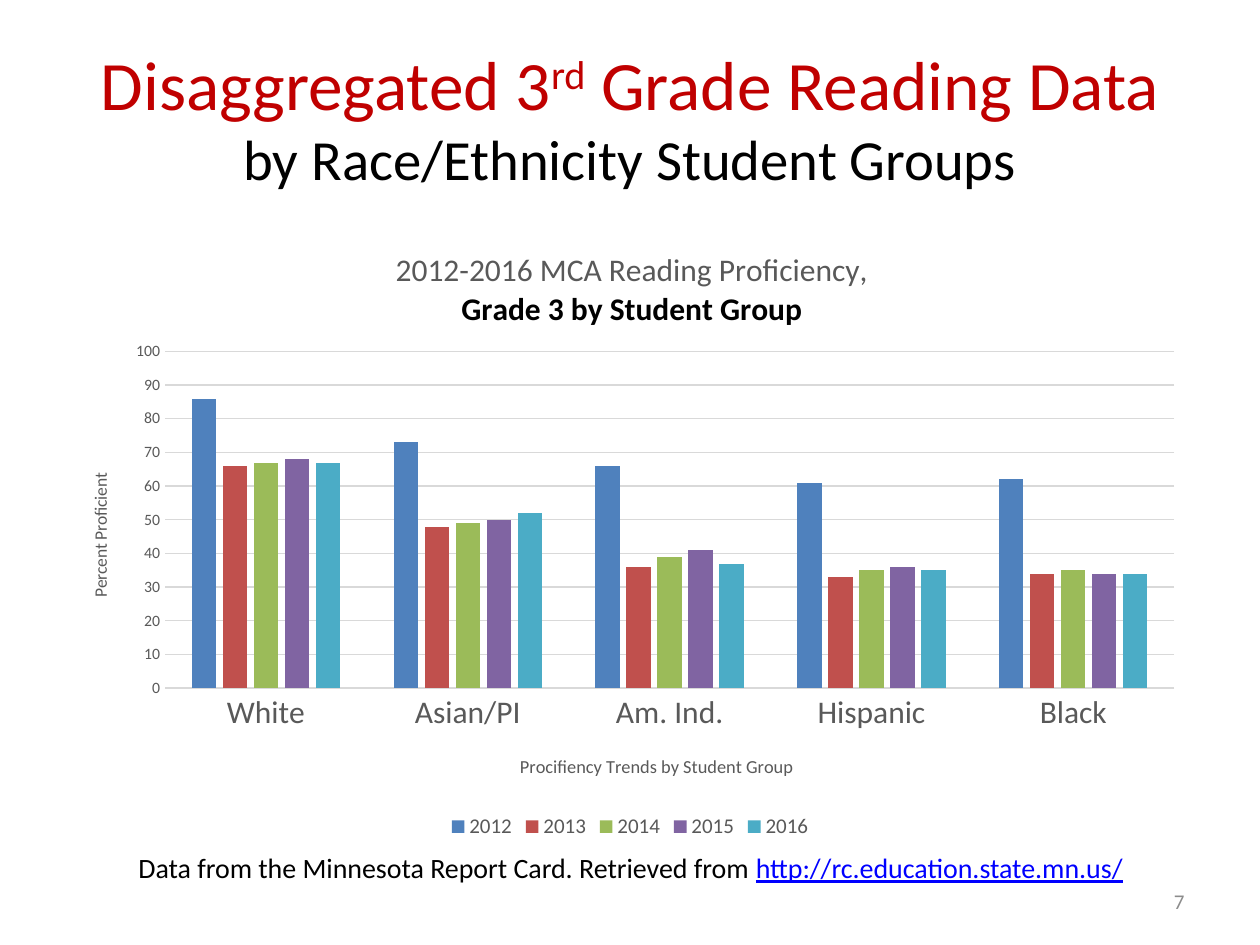
from pptx import Presentation
from pptx.chart.data import CategoryChartData
from pptx.dml.color import RGBColor
from pptx.enum.chart import XL_CHART_TYPE, XL_LEGEND_POSITION, XL_TICK_MARK
from pptx.enum.text import MSO_ANCHOR, PP_ALIGN
from pptx.oxml import parse_xml
from pptx.oxml.ns import nsdecls, qn
from pptx.util import Inches, Pt

FONT = "Calibri"
COLORS = {"title": "C00000", "text": "000000", "link": "0000FF", "number": "8C8C8C",
          "label": "595959", "grid": "D9D9D9"}
GROUPS = ["White", "Asian/PI", "Am. Ind.", "Hispanic", "Black"]
YEARS = {
    "2012": ("4F81BD", [86, 73, 66, 61, 62]),
    "2013": ("C0504D", [66, 48, 36, 33, 34]),
    "2014": ("9BBB59", [67, 49, 39, 35, 35]),
    "2015": ("8064A2", [68, 50, 41, 36, 34]),
    "2016": ("4BACC6", [67, 52, 37, 35, 34]),
}


def set_font(font, size, color, bold=False):
    """Apply the slide typeface with a size, colour and weight."""
    font.name, font.size, font.bold = FONT, Pt(size), bold
    font.color.rgb = RGBColor.from_string(COLORS[color])


def add_text_box(slide, box, anchor=MSO_ANCHOR.TOP, align=PP_ALIGN.LEFT):
    """Add a wrapping text box and return its first paragraph."""
    tf = slide.shapes.add_textbox(*map(Inches, box)).text_frame
    tf.word_wrap = True
    tf.vertical_anchor = anchor
    p = tf.paragraphs[0]
    p.alignment = align
    return p


def add_run(p, text, size, color):
    """Append a styled run to a paragraph."""
    r = p.add_run()
    r.text = text
    set_font(r.font, size, color)
    return r


def add_title(slide, box):
    """Add the two-line heading with its raised ordinal."""
    p = add_text_box(slide, box, MSO_ANCHOR.MIDDLE, PP_ALIGN.CENTER)
    add_run(p, "Disaggregated 3", 39.6, "title")
    ordinal = add_run(p, "rd", 39.6, "title")
    ordinal.font._element.set("baseline", "30000")
    add_run(p, " Grade Reading Data", 39.6, "title")
    p.add_line_break()
    add_run(p, "by Race/Ethnicity Student Groups", 32.4, "text")


def make_layout(x, y, w=None, h=None):
    """Build a manual chart layout from fractions of the chart area."""
    parts = [("xMode", "edge"), ("yMode", "edge"), ("x", x), ("y", y)]
    if w is not None:
        parts = [("layoutTarget", "inner")] + parts + [("w", w), ("h", h)]
    body = "".join(f'<c:{tag} val="{val}"/>' for tag, val in parts)
    return parse_xml(f'<c:layout {nsdecls("c")}><c:manualLayout>{body}</c:manualLayout></c:layout>')


def set_chart_title(title, lines, x, y):
    """Write styled lines into a chart or axis title and place it."""
    tf = title.text_frame
    for i, (text, size, color, bold) in enumerate(lines):
        p = tf.paragraphs[0] if i == 0 else tf.add_paragraph()
        p.text = text
        set_font(p.font, size, color, bold)
    for layout in title.element.findall(qn("c:layout")):
        title.element.remove(layout)
    title.element.find(qn("c:tx")).addnext(make_layout(x, y))


def style_axes(chart):
    """Format both axes, their titles and the gridlines."""
    cat, val = chart.category_axis, chart.value_axis
    for axis, size in ((cat, 18), (val, 9)):
        axis.major_tick_mark = axis.minor_tick_mark = XL_TICK_MARK.NONE
        set_font(axis.tick_labels.font, size, "label")
    val.minimum_scale, val.maximum_scale, val.major_unit = 0, 100, 10
    val.format.line.fill.background()
    for line in (cat.format.line, val.major_gridlines.format.line):
        line.color.rgb = RGBColor.from_string(COLORS["grid"])
        line.width = Pt(0.75)
    set_chart_title(cat.axis_title,
                    [("Procifiency Trends by Student Group", 10.5, "label", False)], 0.4, 0.85)
    set_chart_title(val.axis_title, [("Percent Proficient", 10, "label", False)], 0.02, 0.4)
    val.axis_title.text_frame._txBody.bodyPr.set("rot", "-5400000")


def add_reading_chart(slide, box):
    """Add the clustered columns of proficiency by group and year."""
    data = CategoryChartData()
    data.categories = GROUPS
    for year, (_, values) in YEARS.items():
        data.add_series(year, values)
    chart = slide.shapes.add_chart(XL_CHART_TYPE.COLUMN_CLUSTERED, *map(Inches, box), data).chart
    set_font(chart.font, 10, "text")
    set_chart_title(chart.chart_title,
                    [("2012-2016 MCA Reading Proficiency,", 18, "label", False),
                     ("Grade 3 by Student Group", 18, "text", True)], 0.29, 0.04)
    style_axes(chart)
    chart.has_legend = True
    chart.legend.position = XL_LEGEND_POSITION.BOTTOM
    chart.legend.include_in_layout = False
    set_font(chart.legend.font, 12, "label")
    plot = chart.plots[0]
    plot.gap_width, plot.overlap, plot.vary_by_categories = 219, -27, False
    for series, (color, _) in zip(plot.series, YEARS.values()):
        series.format.fill.solid()
        series.format.fill.fore_color.rgb = RGBColor.from_string(color)
    area = chart.element.find(".//" + qn("c:plotArea"))
    for layout in area.findall(qn("c:layout")):
        area.remove(layout)
    area.insert(0, make_layout(0.09, 0.21, 0.89, 0.54))


def add_source_note(slide, box):
    """Add the data credit line."""
    p = add_text_box(slide, box)
    add_run(p, "Data from the Minnesota Report Card. Retrieved from ", 16, "text")
    add_run(p, "http://rc.education.state.mn.us/", 16, "link").font.underline = True


def add_slide_number(slide, box):
    """Add the page number at the lower right."""
    p = add_text_box(slide, box, MSO_ANCHOR.MIDDLE, PP_ALIGN.RIGHT)
    add_run(p, "7", 12, "number")


def main():
    """Build and save the slide."""
    prs = Presentation()
    prs.slide_width, prs.slide_height = Inches(10), Inches(7.5)
    slide = prs.slides.add_slide(prs.slide_layouts[6])
    add_title(slide, (0.5, 0.3, 9, 1.25))
    add_reading_chart(slide, (0.5, 1.75, 9, 4.95))
    add_source_note(slide, (1, 6.7, 8.5, 0.37))
    add_slide_number(slide, (7.17, 6.95, 2.33, 0.4))
    prs.save("out.pptx")


if __name__ == "__main__":
    main()
